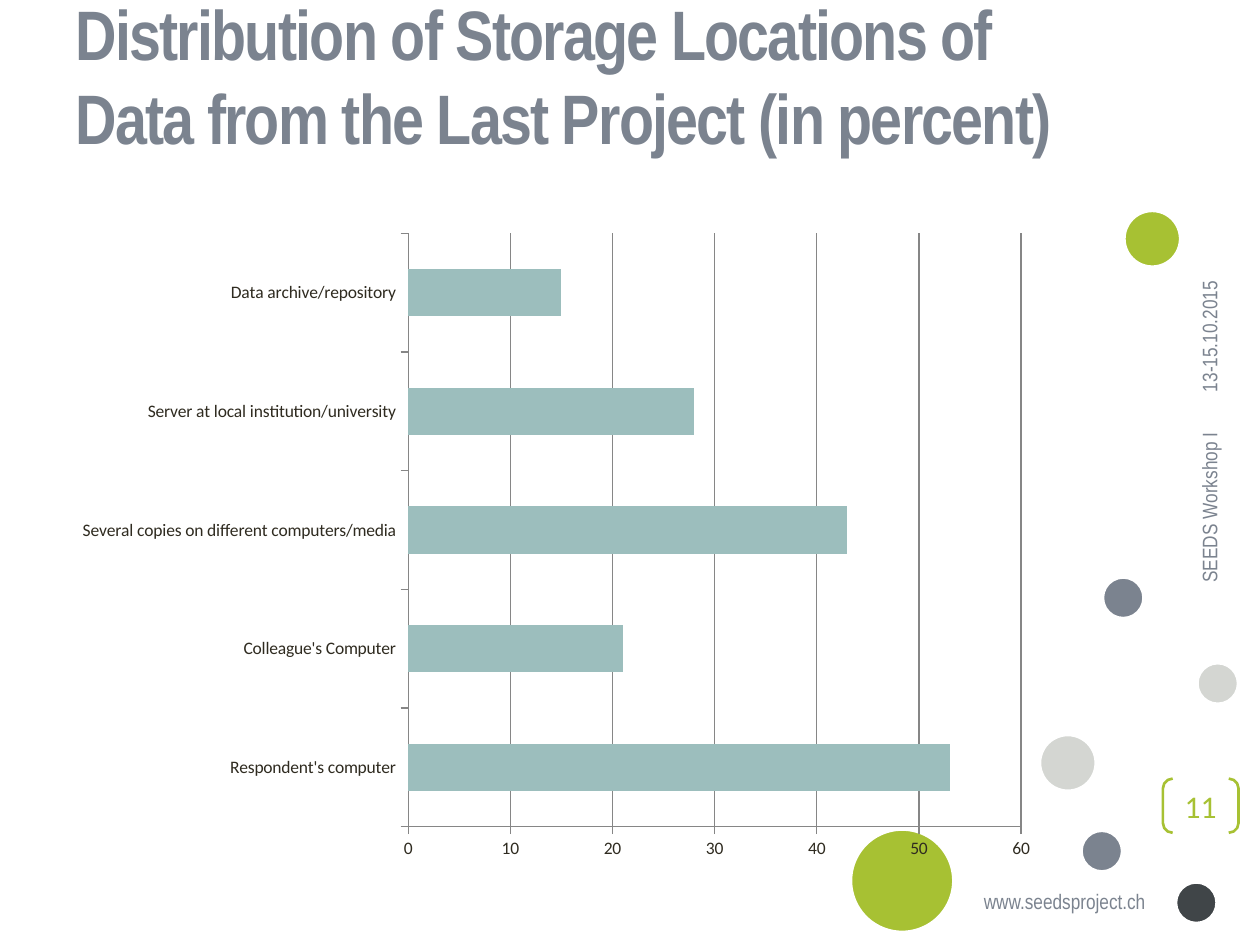
"""Build a slide with a bar chart of data storage locations."""
from pptx import Presentation
from pptx.chart.data import CategoryChartData
from pptx.dml.color import RGBColor
from pptx.enum.chart import XL_CHART_TYPE as CT, XL_TICK_MARK as TM
from pptx.enum.shapes import MSO_SHAPE as SH
from pptx.enum.text import MSO_ANCHOR as MA, MSO_AUTO_SIZE as AS, PP_ALIGN as PA
from pptx.util import Inches, Pt

GREEN = RGBColor(0xA7, 0xC1, 0x33)
SLATE = RGBColor(0x7B, 0x83, 0x8F)
CHARCOAL = RGBColor(0x40, 0x45, 0x48)
SILVER = RGBColor(0xD4, 0xD6, 0xD2)
WHITE = RGBColor(0xFF, 0xFF, 0xFF)
TEAL = RGBColor(0x9C, 0xBE, 0xBD)
INK = RGBColor(0x2F, 0x2B, 0x20)
GRID = RGBColor(0x86, 0x86, 0x86)
NARROW, BODY = "Arial Narrow", "Calibri"
LARGE, MEDIUM, SMALL = 0.82, 0.45, 0.33

DOTS = [
    (6.75, 6.58, LARGE, GREEN),
    (8.92, 1.67, MEDIUM, GREEN),
    (9.33, 7, SMALL, CHARCOAL),
    (8.25, 5.83, MEDIUM, SILVER),
    (9.5, 5.26, SMALL, SILVER),
    (8.58, 6.59, SMALL, SLATE),
    (8.75, 4.58, SMALL, SLATE),
]
LOCATIONS = {
    "Respondent's computer": 53,
    "Colleague's Computer": 21,
    "Several copies on different computers/media": 43,
    "Server at local institution/university": 28,
    "Data archive/repository": 15,
}


def box(*lengths):
    """Convert lengths in inches to slide units."""
    return [Inches(v) for v in lengths]


def add_run(p, text, size, color=SLATE, font=NARROW):
    """Add one formatted run to a paragraph."""
    r = p.add_run()
    r.text = text
    r.font.size, r.font.name = Pt(size), font
    r.font.color.rgb = color
    return r


def set_title(s, text):
    """Place and format the title placeholder."""
    sp = s.shapes.title
    sp.left, sp.top, sp.width, sp.height = box(0.5, 0.3, 8, 1.25)
    tf = sp.text_frame
    tf.auto_size, tf.vertical_anchor = AS.NONE, MA.MIDDLE
    tf.margin_bottom = Inches(0.72)
    p = tf.paragraphs[0]
    p.alignment = PA.LEFT
    r = add_run(p, text, 40)
    r.font.bold = True
    r.font._element.set("spc", "-100")


def add_dot(s, left, top, size, color):
    """Add a decorative circle with a white rim."""
    sp = s.shapes.add_shape(SH.OVAL, *box(left, top, size, size))
    sp.shadow.inherit = False
    sp.fill.solid()
    sp.fill.fore_color.rgb = color
    sp.line.color.rgb, sp.line.width = WHITE, Pt(2)


def add_label(s, text, area, align=PA.LEFT, rotation=0, anchor=MA.MIDDLE, wrap=True):
    """Add a small footer text."""
    sp = s.shapes.add_textbox(*box(*area))
    sp.rotation = rotation
    tf = sp.text_frame
    tf.word_wrap, tf.vertical_anchor = wrap, anchor
    p = tf.paragraphs[0]
    p.alignment = align
    add_run(p, text, 12)


def add_page_number(s, text):
    """Add the page number between brackets."""
    sp = s.shapes.add_shape(SH.DOUBLE_BRACKET, *box(9.23, 6.18, 0.6, 0.43))
    sp.adjustments[0] = 0.18
    sp.shadow.inherit = False
    sp.fill.background()
    sp.line.color.rgb, sp.line.width = GREEN, Pt(1.5)
    tf = sp.text_frame
    tf.margin_left = tf.margin_right = tf.margin_top = tf.margin_bottom = 0
    tf.vertical_anchor = MA.MIDDLE
    p = tf.paragraphs[0]
    p.alignment = PA.CENTER
    add_run(p, text, 18, GREEN, BODY)


def add_bar_chart(s, values):
    """Add the horizontal bar chart of storage locations."""
    data = CategoryChartData()
    data.categories = list(values)
    data.add_series("Series 1", list(values.values()))
    area = box(0.5, 1.75, 7.83, 5.17)
    chart = s.shapes.add_chart(CT.BAR_CLUSTERED, *area, data).chart
    chart.has_title = chart.has_legend = False
    chart.font.size, chart.font.name = Pt(10), BODY
    chart.font.color.rgb = INK
    plot = chart.plots[0]
    plot.gap_width, plot.vary_by_categories = 150, False
    fill = plot.series[0].format.fill
    fill.solid()
    fill.fore_color.rgb = TEAL
    for axis in (chart.category_axis, chart.value_axis):
        axis.major_tick_mark, axis.minor_tick_mark = TM.OUTSIDE, TM.NONE
        axis.format.line.color.rgb = GRID
    axis = chart.value_axis
    axis.minimum_scale, axis.maximum_scale, axis.major_unit = 0, 60, 10
    axis.has_major_gridlines = True
    axis.major_gridlines.format.line.color.rgb = GRID


def main():
    """Build and save the presentation."""
    prs = Presentation()
    prs.slide_width, prs.slide_height = box(10, 7.5)
    s = prs.slides.add_slide(prs.slide_layouts[5])
    set_title(s, "Distribution of Storage Locations of Data from the Last Project (in percent)")
    for dot in DOTS:
        add_dot(s, *dot)
    add_label(s, "www.seedsproject.ch", (7.71, 7, 1.54, 0.3), anchor=MA.TOP, wrap=False)
    add_page_number(s, "11")
    add_label(s, "SEEDS Workshop I", (8.72, 4.03, 1.75, 0.36), PA.RIGHT, 270)
    add_label(s, "13-15.10.2015", (8.95, 2.4, 1.29, 0.33), rotation=270)
    add_bar_chart(s, LOCATIONS)
    prs.save("out.pptx")


if __name__ == "__main__":
    main()
